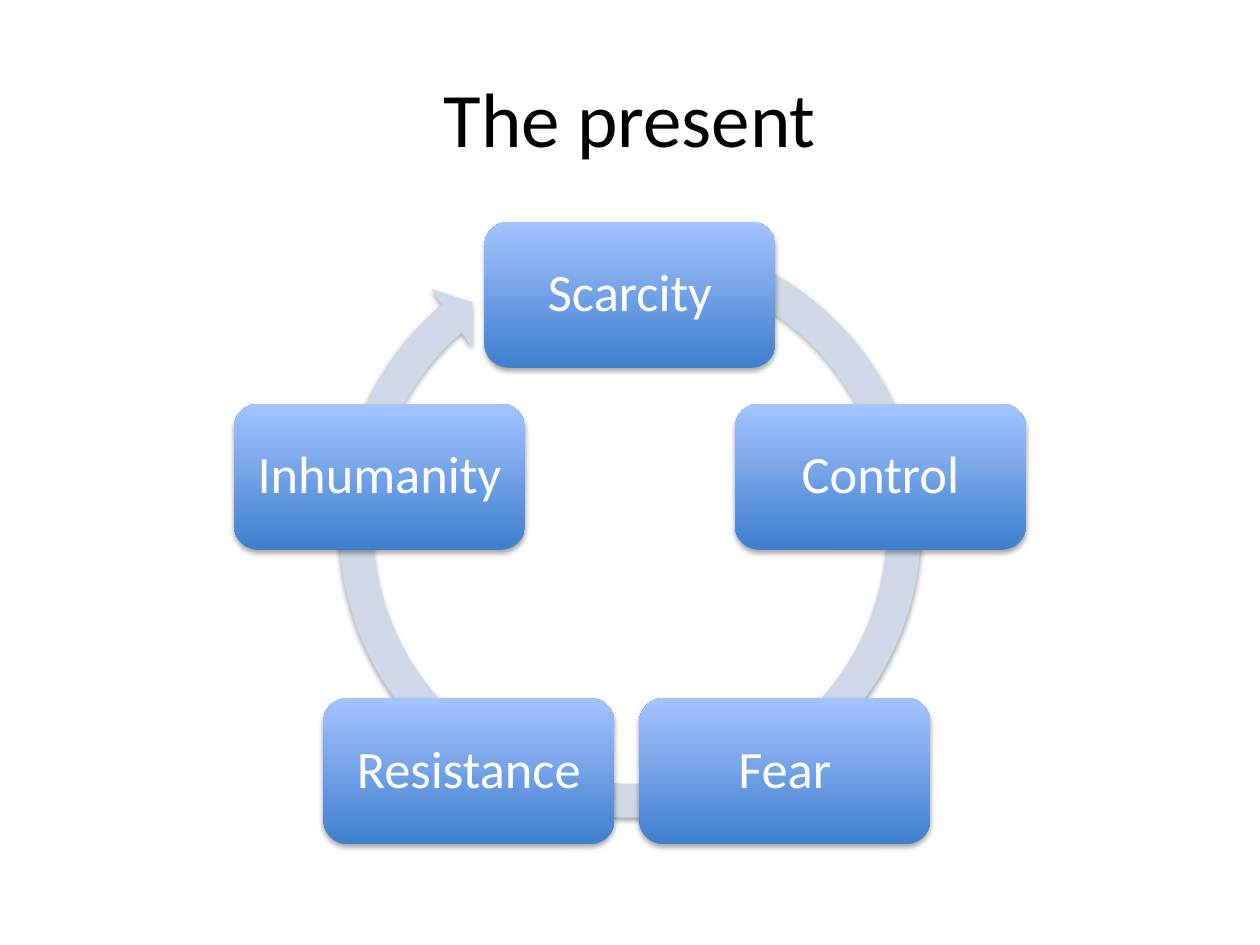
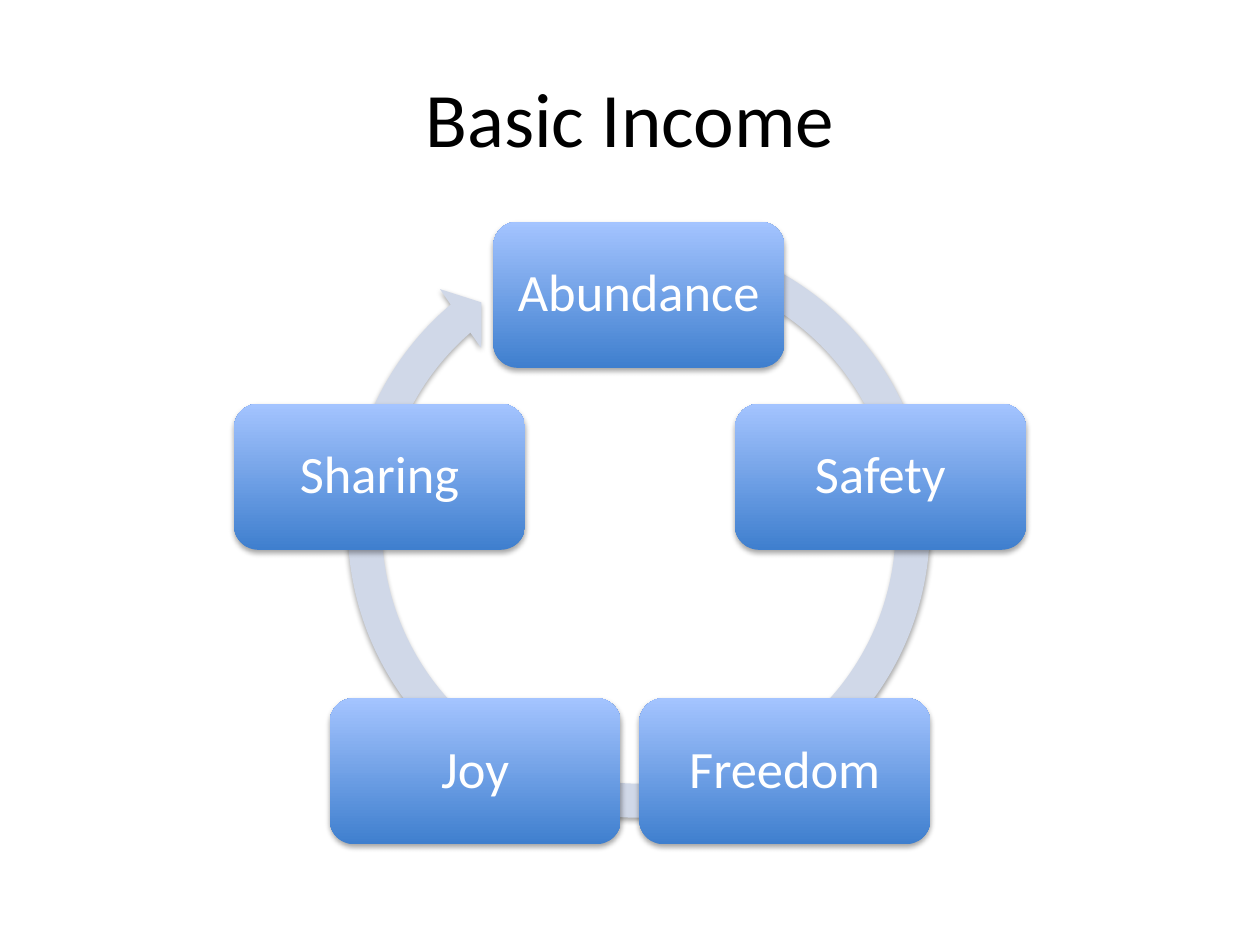
"""Build two slides, each with a cycle of five linked ideas."""
import math

from lxml import etree
from pptx import Presentation
from pptx.dml.color import RGBColor
from pptx.enum.shapes import MSO_SHAPE
from pptx.enum.text import MSO_ANCHOR, PP_ALIGN
from pptx.oxml.ns import qn
from pptx.util import Inches, Pt

ROUNDED, ARROW = MSO_SHAPE.ROUNDED_RECTANGLE, MSO_SHAPE.CIRCULAR_ARROW
MIDDLE, CENTER = MSO_ANCHOR.MIDDLE, PP_ALIGN.CENTER

SLIDES = [
    {"title": "The present",
     "steps": ["Scarcity", "Control", "Fear", "Resistance", "Inhumanity"],
     "nudges": {"Resistance": -0.05}, "arrow_nudge": 0},
    {"title": "Basic Income",
     "steps": ["Abundance", "Safety", "Freedom", "Joy", "Sharing"],
     "nudges": {"Abundance": 0.07}, "arrow_nudge": 0.07},
]
COLORS = {"title": "000000", "label": "FFFFFF", "arrow": "D0D8E8",
          "box_bottom": "3F7FCE", "box_top": "A4C4FF", "shadow": "000000"}
FONT = "Calibri"
CENTER_X, CENTER_Y, RADIUS = 5, 4.43, 2.09
BOX_W, BOX_H = 2.31, 1.16
ARROW_LEFT, ARROW_TOP, ARROW_SIZE = 2.54, 1.72, 4.92
ARROW_ADJUSTMENTS = (0.055, 3.307, 137.657, 173.922, 0.058)


def rgb(name):
    return RGBColor.from_string(COLORS[name])


def write(shape, text, size, color, inset=0.1, line_spacing=1.0):
    tf = shape.text_frame
    tf.word_wrap = True
    tf.vertical_anchor = MIDDLE
    tf.margin_left = tf.margin_right = Inches(inset)
    tf.margin_top = tf.margin_bottom = Inches(inset)
    p = tf.paragraphs[0]
    p.alignment = CENTER
    p.line_spacing = line_spacing
    r = p.add_run()
    r.text = text
    r.font.name, r.font.size = FONT, Pt(size)
    r.font.color.rgb = rgb(color)


def add_soft_shape(s, kind, left, top, width, height):
    sp = s.shapes.add_shape(kind, *map(Inches, (left, top, width, height)))
    sp.line.fill.background()
    sp.shadow.inherit = False
    effects = sp._element.spPr.find(qn("a:effectLst"))
    shadow = etree.SubElement(effects, qn("a:outerShdw"), blurRad=str(Pt(3.1)),
                              dist=str(Pt(1.8)), dir="5400000", rotWithShape="0")
    color = etree.SubElement(shadow, qn("a:srgbClr"), val=COLORS["shadow"])
    etree.SubElement(color, qn("a:alpha"), val="35000")
    return sp


def add_arrow(s, nudge):
    sp = add_soft_shape(s, ARROW, ARROW_LEFT + nudge, ARROW_TOP, ARROW_SIZE, ARROW_SIZE)
    for i, value in enumerate(ARROW_ADJUSTMENTS):
        sp.adjustments[i] = value
    sp.fill.solid()
    sp.fill.fore_color.rgb = rgb("arrow")


def add_step(s, text, angle, nudge):
    left = CENTER_X + RADIUS * math.sin(angle) - BOX_W / 2 + nudge
    top = CENTER_Y - RADIUS * math.cos(angle) - BOX_H / 2
    sp = add_soft_shape(s, ROUNDED, left, top, BOX_W, BOX_H)
    sp.fill.gradient()
    sp.fill.gradient_angle = 90
    for stop, name in zip(sp.fill.gradient_stops, ("box_bottom", "box_top")):
        stop.color.rgb = rgb(name)
    write(sp, text, 30, "label", inset=0.11, line_spacing=0.9)


def add_cycle_slide(prs, content):
    s = prs.slides.add_slide(prs.slide_layouts[6])
    title = s.shapes.add_textbox(Inches(0.5), Inches(0.3), Inches(9), Inches(1.25))
    write(title, content["title"], 44, "title")
    add_arrow(s, content["arrow_nudge"])
    steps = content["steps"]
    for i, text in enumerate(steps):
        add_step(s, text, math.tau * i / len(steps), content["nudges"].get(text, 0))


def main():
    prs = Presentation()
    prs.slide_width, prs.slide_height = Inches(10), Inches(7.5)
    for content in SLIDES:
        add_cycle_slide(prs, content)
    prs.save("out.pptx")


if __name__ == "__main__":
    main()
